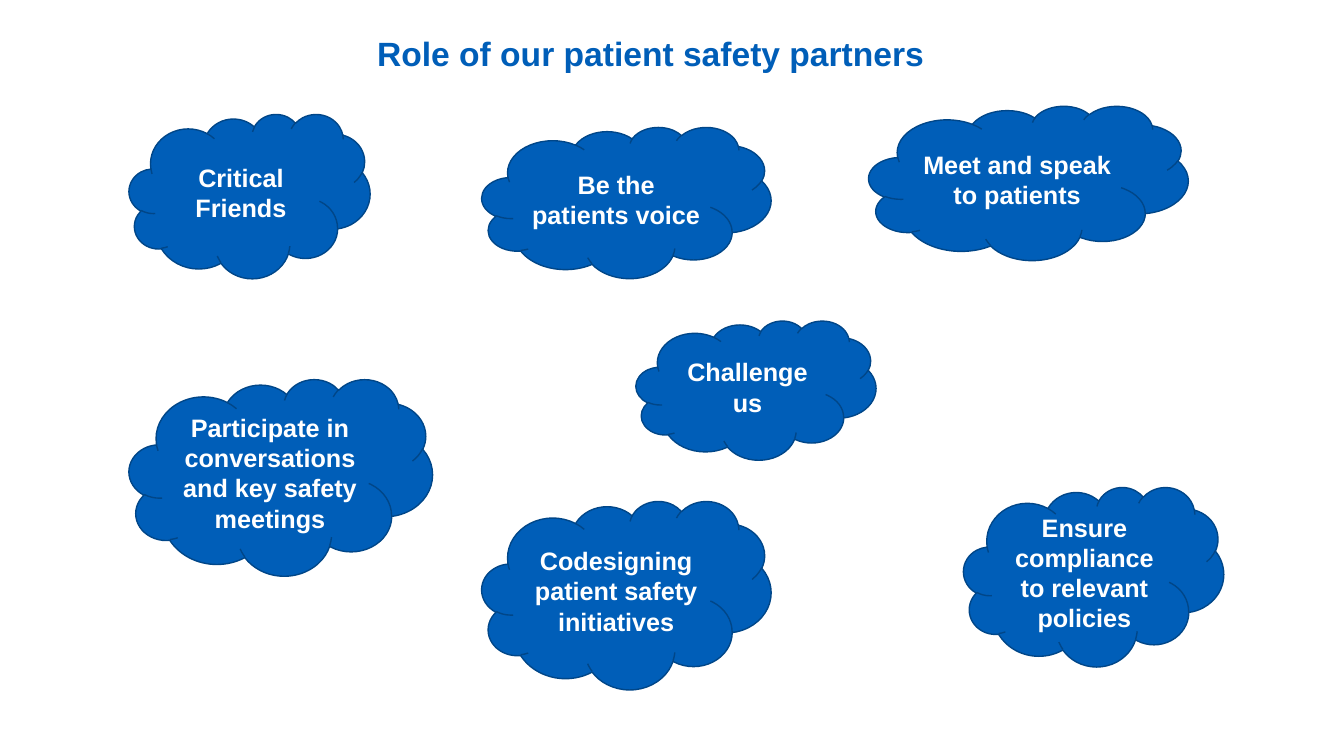
import pptx
import pptx.dml.color
import pptx.enum.shapes
import pptx.enum.text
import pptx.util
from dataclasses import dataclass

Pt = pptx.util.Pt
RGB = pptx.dml.color.RGBColor.from_string

# Content: text, left, top, width, height in points
TITLE = ("Role of our patient safety partners", 108.7, 9.4, 712.1, 61.2)
LEFT_COLUMN, MIDDLE_COLUMN = 92.2, 344.2
ROLES = [
    ("Critical Friends", LEFT_COLUMN, 81.4, 172.1, 117.4),
    ("Challenge us", 454.3, 229, 171.4, 99.4),
    ("Be the patients voice", MIDDLE_COLUMN, 90.7, 206.6, 108),
    ("Ensure compliance to relevant policies", 688.3, 347.8, 185.8, 128.2),
    ("Participate in conversations and key safety meetings",
     LEFT_COLUMN, 270.7, 216.7, 140.4),
    ("Meet and speak to patients", 620.6, 75.6, 228.2, 110.2),
    ("Codesigning patient safety initiatives", MIDDLE_COLUMN, 357.8, 206.6, 134.6),
]


@dataclass
class Theme:
    font: str = "Arial"
    blue: str = "005EB8"
    outline: str = "004688"
    white: str = "FFFFFF"
    title_size: int = 24
    role_size: int = 18


theme = Theme()


def write(sp, text, size, color):
    tf = sp.text_frame
    tf.word_wrap = True
    tf.vertical_anchor = pptx.enum.text.MSO_ANCHOR.MIDDLE
    tf.text = text
    p = tf.paragraphs[0]
    p.alignment = pptx.enum.text.PP_ALIGN.CENTER
    p.font.name = theme.font
    p.font.size = Pt(size)
    p.font.bold = True
    p.font.color.rgb = RGB(color)
    return tf


def add_title(s):
    text, *box = TITLE
    sp = s.shapes.title
    sp.left, sp.top, sp.width, sp.height = map(Pt, box)
    tf = write(sp, text, theme.title_size, theme.blue)
    tf.auto_size = pptx.enum.text.MSO_AUTO_SIZE.NONE
    tf.margin_left = tf.margin_top = tf.margin_right = tf.margin_bottom = 0
    tf.paragraphs[0].line_spacing = 0.9


def add_cloud(s, text, *box):
    sp = s.shapes.add_shape(pptx.enum.shapes.MSO_SHAPE.CLOUD, *map(Pt, box))
    sp.shadow.inherit = False
    sp.fill.solid()
    sp.fill.fore_color.rgb = RGB(theme.blue)
    sp.line.color.rgb = RGB(theme.outline)
    sp.line.width = Pt(1)
    write(sp, text, theme.role_size, theme.white)


def main():
    prs = pptx.Presentation()
    prs.slide_width, prs.slide_height = Pt(960), Pt(540)
    s = prs.slides.add_slide(prs.slide_layouts[5])

    # Title
    add_title(s)

    # One cloud per role
    for role in ROLES:
        add_cloud(s, *role)

    prs.save("out.pptx")


if __name__ == "__main__":
    main()
